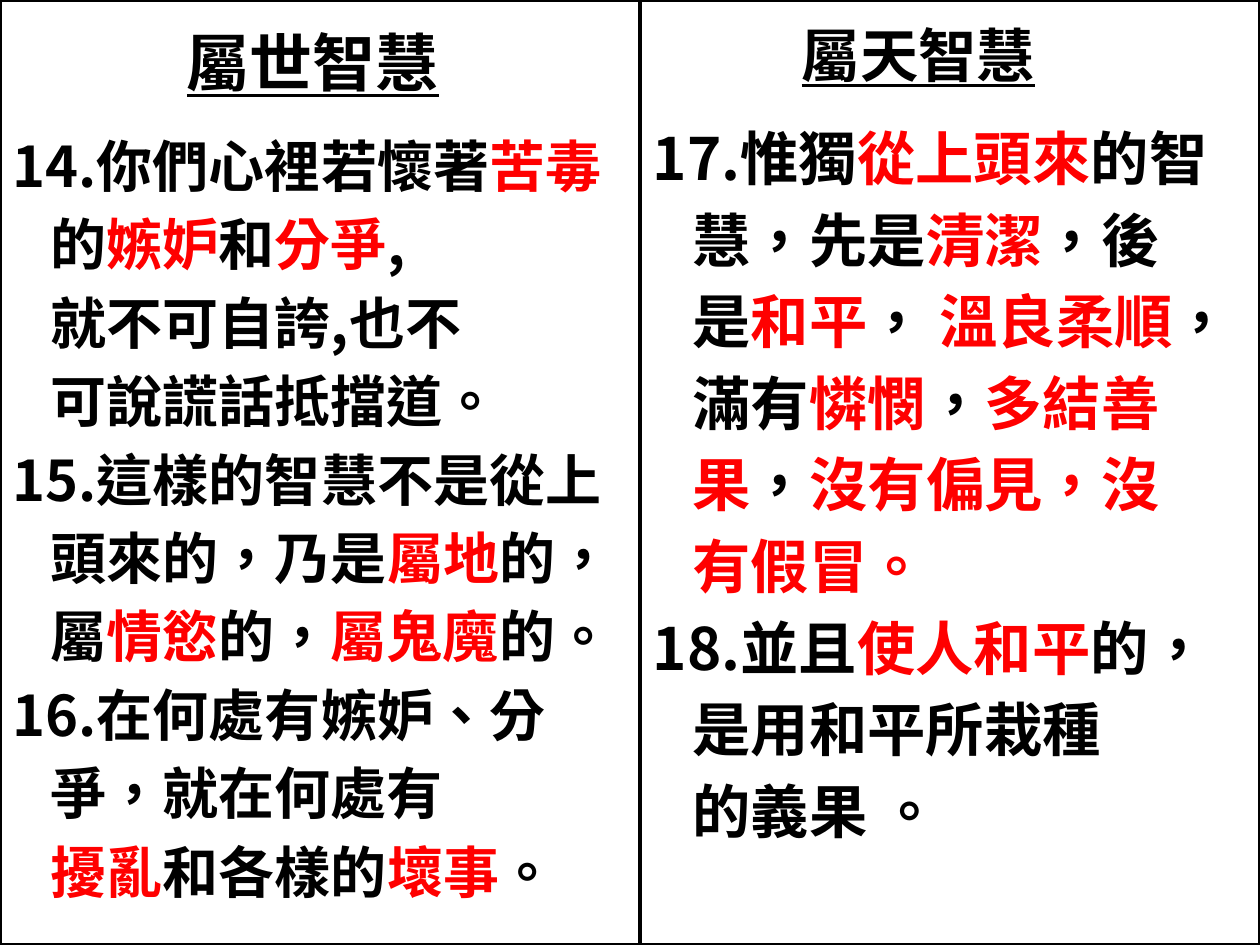
from dataclasses import dataclass

from pptx import Presentation
from pptx.dml.color import RGBColor
from pptx.enum.lang import MSO_LANGUAGE_ID
from pptx.enum.shapes import MSO_SHAPE
from pptx.enum.text import MSO_ANCHOR, MSO_AUTO_SIZE, PP_ALIGN
from pptx.oxml.ns import qn
from pptx.util import Emu, Pt

RECT = MSO_SHAPE.RECTANGLE
CENTER, LEFT = PP_ALIGN.CENTER, PP_ALIGN.LEFT
TOP, BOTTOM = MSO_ANCHOR.TOP, MSO_ANCHOR.BOTTOM
NO_FIT = MSO_AUTO_SIZE.NONE
CHINESE = MSO_LANGUAGE_ID.TRADITIONAL_CHINESE
PX_PER_INCH = 126
COMPARISON = 4


@dataclass(frozen=True)
class Theme:
    paper: RGBColor = RGBColor(255, 255, 255)
    ink: RGBColor = RGBColor(0, 0, 0)
    accent: RGBColor = RGBColor(255, 0, 0)
    heading_font: str = "Calibri"
    body_font: str = "Noto Sans CJK SC"
    border: float = 2
    line_spacing: float = 1.0
    space_share: float = 0.2  # space before, as a share of the type size


@dataclass(frozen=True)
class Box:
    x: int
    y: int
    w: int
    h: int


@dataclass(frozen=True)
class Column:
    panel: Box
    heading_box: Box
    body_box: Box
    heading_id: int
    body_id: int
    heading_size: float
    body_size: float
    indent: int
    heading: str
    lines: tuple[str, ...]


THEME = Theme()

# Asterisks enclose the highlighted words
COLUMNS = (
    Column(
        Box(0, 0, 640, 945), Box(15, 16, 596, 89), Box(0, 125, 640, 820),
        1, 2, 36, 32, 38, "屬世智慧",
        (
            "14.你們心裡若懷著*苦毒*",
            "的*嫉妒*和*分爭*,",
            "就不可自誇,也不",
            "可說謊話抵擋道。",
            "15.這樣的智慧不是從上",
            "頭來的，乃是*屬地*的，",
            "屬*情慾*的，*屬鬼魔*的。",
            "16.在何處有嫉妒、分",
            "爭，就在何處有",
            "*擾亂*和各樣的*壞事*。",
        ),
    ),
    Column(
        Box(640, 0, 620, 945), Box(640, 16, 557, 79), Box(640, 116, 605, 814),
        3, 4, 33.3, 33.3, 40, "屬天智慧",
        (
            "17.惟獨*從上頭來*的智",
            "慧，先是*清潔*，後",
            "是*和平*， *溫良柔順*，",
            "滿有*憐憫*，*多結善*",
            "*果*，*沒有偏見，沒*",
            "*有假冒。*",
            "18.並且*使人和平*的，",
            "是用和平所栽種",
            "的義果 。",
        ),
    ),
)


def px(n: int) -> Emu:
    return Emu(round(n * 914400 / PX_PER_INCH))


def place(sp, box: Box) -> None:
    sp.left, sp.top, sp.width, sp.height = map(px, (box.x, box.y, box.w, box.h))


def style_run(r, font: str, size: float, color: RGBColor) -> None:
    r.font.name, r.font.size, r.font.bold = font, Pt(size), True
    r.font.color.rgb = color
    r.font.language_id = CHINESE


def style_paragraph(p, align, size: float, indent: int) -> None:
    p.alignment = align
    p.line_spacing = THEME.line_spacing
    p.space_before = Pt(size * THEME.space_share)
    pPr = p._p.get_or_add_pPr()
    pPr.set("marL", str(px(indent)))
    pPr.set("indent", "0")
    pPr.append(pPr.makeelement(qn("a:buNone"), {}))


def prepare_frame(sp, box: Box, anchor):
    place(sp, box)
    tf = sp.text_frame
    tf.word_wrap, tf.auto_size, tf.vertical_anchor = True, NO_FIT, anchor
    return tf


def add_panel(slide, box: Box, depth: int) -> None:
    sp = slide.shapes.add_shape(RECT, 0, 0, 0, 0)
    place(sp, box)
    sp.shadow.inherit = False
    sp.fill.solid()
    sp.fill.fore_color.rgb = THEME.paper
    sp.line.color.rgb = THEME.ink
    sp.line.width = Pt(THEME.border)
    slide.shapes._spTree.insert(depth, sp._element)


def fill_heading(sp, col: Column) -> None:
    tf = prepare_frame(sp, col.heading_box, BOTTOM)
    tf.text = col.heading
    p = tf.paragraphs[0]
    style_paragraph(p, CENTER, col.heading_size, 0)
    r = p.runs[0]
    style_run(r, THEME.heading_font, col.heading_size, THEME.ink)
    r.font.underline = True


def fill_body(sp, col: Column) -> None:
    tf = prepare_frame(sp, col.body_box, TOP)
    for i, line in enumerate(col.lines):
        p = tf.add_paragraph() if i else tf.paragraphs[0]
        # Verse numbers hang left of the continuation lines
        indent = 0 if line[0].isdigit() else col.indent
        style_paragraph(p, LEFT, col.body_size, indent)
        for j, part in enumerate(line.split("*")):
            if part:
                r = p.add_run()
                r.text = part
                color = THEME.accent if j % 2 else THEME.ink
                style_run(r, THEME.body_font, col.body_size, color)


def main() -> None:
    prs = Presentation()
    prs.slide_width, prs.slide_height = px(1260), px(945)
    slide = prs.slides.add_slide(prs.slide_layouts[COMPARISON])
    title = slide.shapes.title._element
    title.getparent().remove(title)
    holders = {sp.placeholder_format.idx: sp for sp in slide.placeholders}

    # Bordered halves, behind the text
    for col in COLUMNS:
        add_panel(slide, col.panel, 2)

    # Headings and verses
    for col in COLUMNS:
        fill_heading(holders[col.heading_id], col)
        fill_body(holders[col.body_id], col)

    prs.save("out.pptx")


if __name__ == "__main__":
    main()
